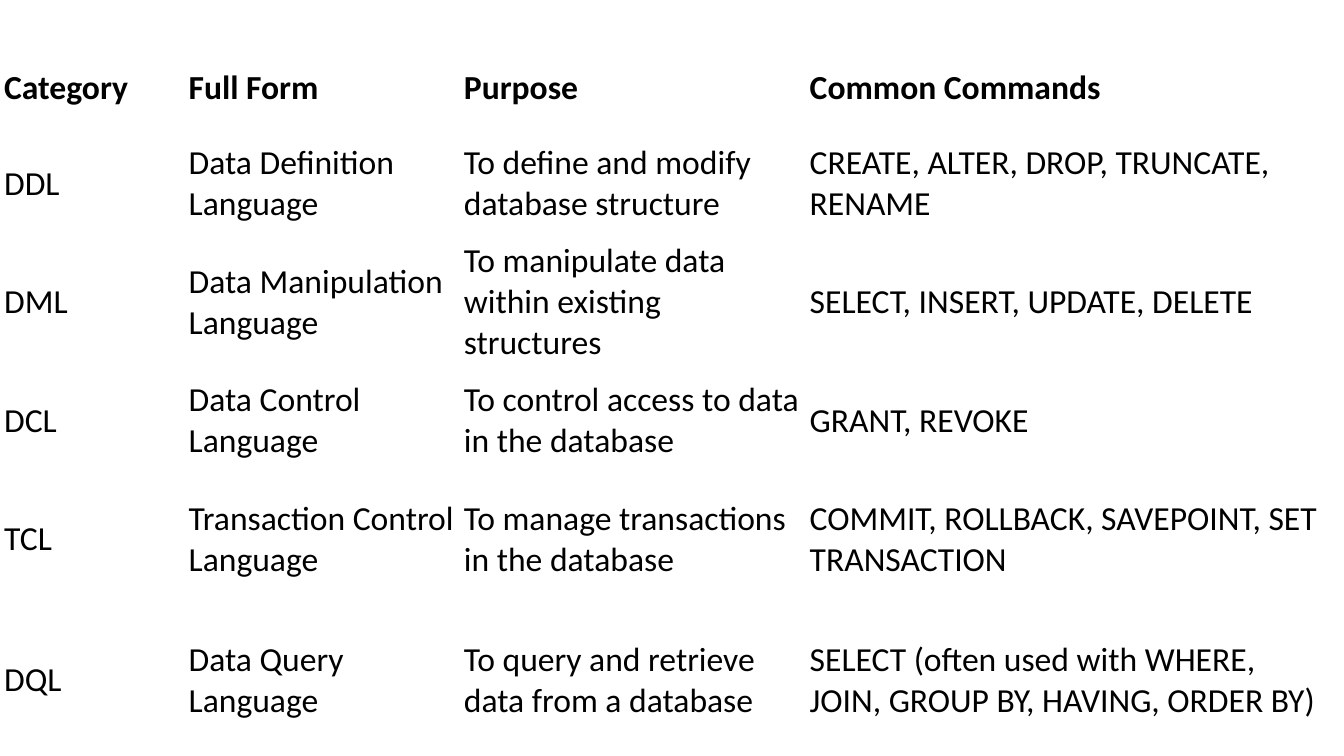
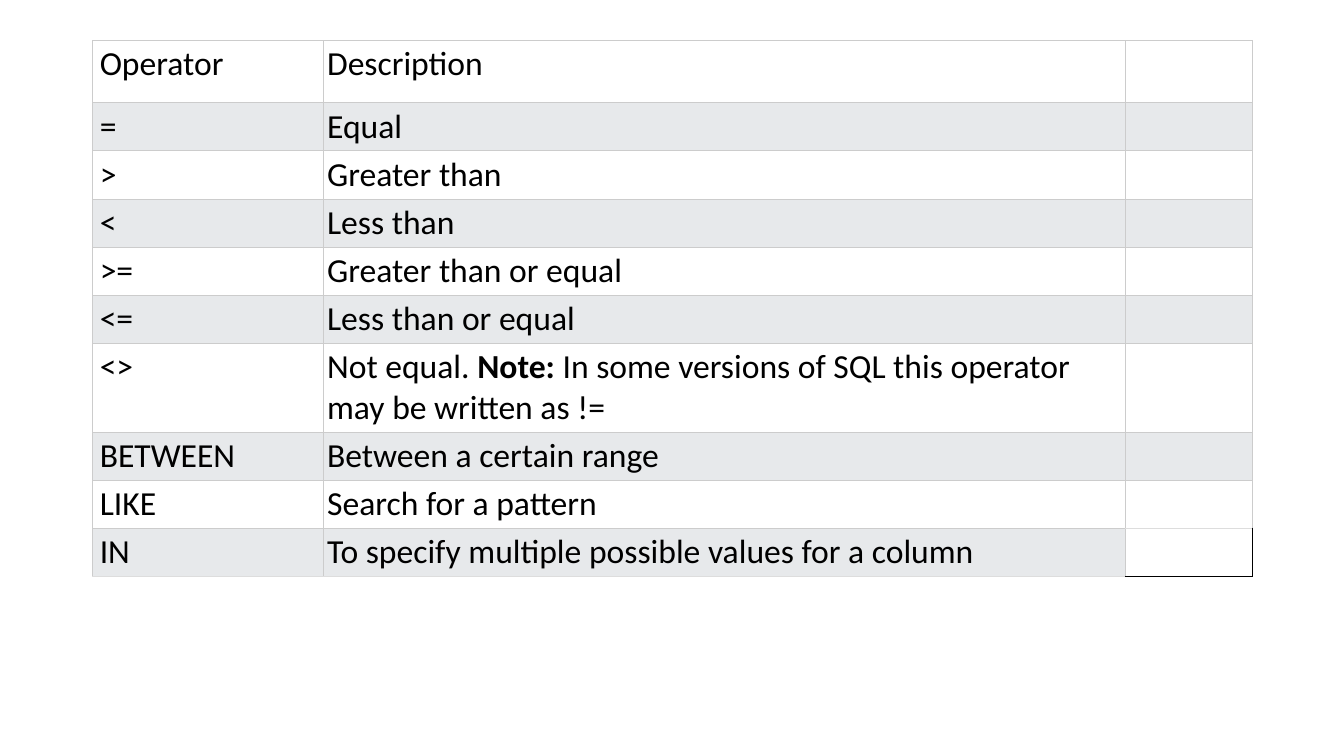
"""Build two SQL reference slides: command categories and comparison operators."""
from dataclasses import dataclass

from lxml.etree import SubElement
from pptx import Presentation
from pptx.dml.color import RGBColor as Rgb
from pptx.enum.text import MSO_ANCHOR as Anchor
from pptx.oxml.ns import qn
from pptx.util import Inches, Pt


@dataclass(frozen=True)
class Theme:
    """Colours and type sizes shared by the slides."""
    font: str = "Calibri"
    body: int = 24
    rule: float = 0.5
    ink: str = "000000"
    paper: str = "FFFFFF"
    band: str = "E7E9EB"
    grid: str = "CCCCCC"
    soft_grid: str = "DDDDDD"


THEME = Theme()
BLANK_LAYOUT = 6
SIDES = ("lnL", "lnR", "lnT", "lnB")

CATEGORIES = [
    ("Category", "Full Form", "Purpose", "Common Commands"),
    ("DDL", "Data Definition Language", "To define and modify database structure",
     "CREATE, ALTER, DROP, TRUNCATE, RENAME"),
    ("DML", "Data Manipulation Language", "To manipulate data within existing structures",
     "SELECT, INSERT, UPDATE, DELETE"),
    ("DCL", "Data Control Language", "To control access to data in the database",
     "GRANT, REVOKE"),
    ("TCL", "Transaction Control Language", "To manage transactions in the database",
     "COMMIT, ROLLBACK, SAVEPOINT, SET TRANSACTION"),
    ("DQL", "Data Query Language", "To query and retrieve data from a database",
     "SELECT (often used with WHERE, JOIN, GROUP BY, HAVING, ORDER BY)"),
]

OPERATORS = [
    ("Operator", "Description", ""),
    ("=", "Equal", ""),
    (">", "Greater than", ""),
    ("<", "Less than", ""),
    (">=", "Greater than or equal", ""),
    ("<=", "Less than or equal", ""),
    ("<>", "Not equal. **Note:** In some versions of SQL this operator may be written as !=", ""),
    ("BETWEEN", "Between a certain range", ""),
    ("LIKE", "Search for a pattern", ""),
    ("IN", "To specify multiple possible values for a column", ""),
]


def write_text(frame, text, *, size=THEME.body, color=THEME.ink, bold=False):
    """Write text into a frame, setting parts between double asterisks in bold."""
    for index, part in enumerate(text.split("**")):
        if part:
            run = frame.paragraphs[0].add_run()
            run.text = part
            run.font.name = THEME.font
            run.font.size = Pt(size)
            run.font.bold = bold or index % 2 == 1
            run.font.color.rgb = Rgb.from_string(color)


class Deck:
    """Holds the presentation, its theme and the current slide."""

    def __init__(self, theme):
        """Start an empty widescreen presentation."""
        self.theme = theme
        self.prs = Presentation()
        self.prs.slide_width, self.prs.slide_height = Inches(13.33), Inches(7.5)
        self.slide = None

    def new_slide(self):
        """Add a blank slide and make it current."""
        self.slide = self.prs.slides.add_slide(self.prs.slide_layouts[BLANK_LAYOUT])

    def add_table(self, rows, left, top, widths, heights):
        """Add a plain table filled with text and return it."""
        frame = self.slide.shapes.add_table(
            len(rows), len(widths), Inches(left), Inches(top),
            Inches(sum(widths)), Inches(sum(heights)))
        table = frame.table
        table.first_row = table.horz_banding = False
        for column, width in zip(table.columns, widths):
            column.width = Inches(width)
        for row, height in zip(table.rows, heights):
            row.height = Inches(height)
        return table

    def style_cell(self, cell, fill, borders, insets, anchor=Anchor.TOP):
        """Set the borders, fill, insets in points and anchor of a cell."""
        properties = cell._tc.get_or_add_tcPr()
        for side in SIDES:
            line = SubElement(properties, qn(f"a:{side}"), w=str(Pt(self.theme.rule)))
            solid = SubElement(line, qn("a:solidFill"))
            SubElement(solid, qn("a:srgbClr"), val=borders[side])
        if fill:
            cell.fill.solid()
            cell.fill.fore_color.rgb = Rgb.from_string(fill)
        else:
            cell.fill.background()
        (cell.margin_left, cell.margin_top,
         cell.margin_right, cell.margin_bottom) = [Inches(points / 72) for points in insets]
        cell.vertical_anchor = anchor

    def save(self):
        """Save the presentation."""
        self.prs.save("out.pptx")


def add_categories(deck):
    """Build the slide of SQL command categories."""
    deck.new_slide()
    table = deck.add_table(CATEGORIES, 0, 0.4, [1.83, 2.73, 3.43, 5.22],
                           [0.95, 0.95, 1.4, 0.95, 1.4, 1.4])
    borders = dict.fromkeys(SIDES, THEME.paper)
    for r, row in enumerate(CATEGORIES):
        for c, text in enumerate(row):
            cell = table.cell(r, c)
            deck.style_cell(cell, THEME.paper, borders, (3, 1.5, 3, 1.5), Anchor.MIDDLE)
            write_text(cell.text_frame, text, bold=r == 0)


def add_operators(deck):
    """Build the slide of SQL comparison operators."""
    deck.new_slide()
    heights = [0.62] + [0.47] * 5 + [0.88] + [0.47] * 3
    table = deck.add_table(OPERATORS, 0.92, 0.4, [2.29, 7.95, 1.26], heights)
    last_row, last_column = len(OPERATORS) - 1, len(OPERATORS[0]) - 1
    special_edges = {
        (last_row - 1, last_column): {"lnB": THEME.soft_grid},
        (last_row, 0): {"lnB": THEME.soft_grid},
        (last_row, 1): {"lnB": THEME.soft_grid},
        (last_row, last_column): {"lnT": THEME.soft_grid, "lnR": THEME.ink, "lnB": THEME.ink},
    }
    for r, row in enumerate(OPERATORS):
        for c, text in enumerate(row):
            cell = table.cell(r, c)
            fill = THEME.band if r % 2 else THEME.paper
            if (r, c) == (last_row, last_column):
                fill = None
            borders = dict.fromkeys(SIDES, THEME.grid) | special_edges.get((r, c), {})
            deck.style_cell(cell, fill, borders, (2.5 if c else 5, 2.5, 2.5, 2.5))
            write_text(cell.text_frame, text)


def main():
    """Build and save the deck."""
    deck = Deck(THEME)
    add_categories(deck)
    add_operators(deck)
    deck.save()


if __name__ == "__main__":
    main()
